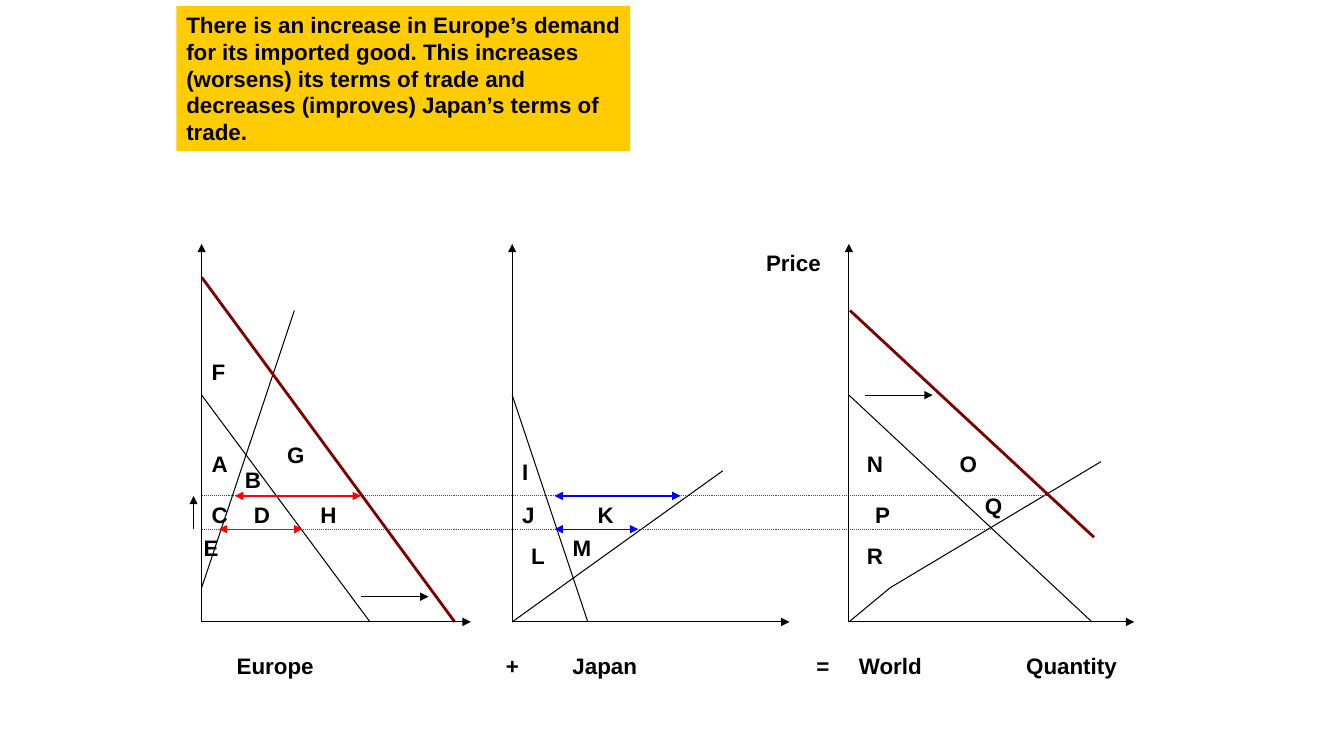
"""Draw the Europe, Japan and world trade diagrams after a rise in Europe's demand."""
from dataclasses import dataclass

from lxml import etree
from pptx import Presentation
from pptx import util as u
from pptx.dml.color import RGBColor
from pptx.enum import dml, shapes, text
from pptx.oxml import ns


@dataclass(frozen=True)
class Theme:
    ink: str = "000000"
    red: str = "FF0000"
    blue: str = "0000FF"
    maroon: str = "800000"
    gold: str = "FFCC00"
    font: str = "Arial"
    size: float = 16
    thin: float = 0.75
    trade: float = 1
    bold: float = 2


THEME = Theme()
EUROPE, JAPAN, WORLD = 2, 5.08, 8.42
BASE, TOP = 6.17, 2.42
OLD_PRICE, NEW_PRICE = 5.25, 4.92
CAPTION_TOP = 6.42

AXIS_ENDS = {EUROPE: 4.67, JAPAN: 7.83, WORLD: 11.25}
CURVES = [
    ((EUROPE, 3.92), (3.67, BASE)),
    ((JAPAN, 3.92), (5.83, BASE)),
    ((WORLD, 3.92), (10.83, BASE)),
    ((EUROPE, 5.83), (2.92, 3.08)),
    ((JAPAN, BASE), (7.17, 4.67)),
    ((WORLD, BASE), (8.83, 5.83)),
    ((8.83, 5.83), (10.92, 4.58)),
]
NEW_DEMAND = [((8.43, 3.08), (10.85, 5.33)), ((EUROPE, 2.75), (4.51, BASE))]
PRICE_LINES = [(OLD_PRICE, 9.83), (NEW_PRICE, 10.42)]
TRADE_VOLUMES = [
    (2.17, 3, OLD_PRICE, THEME.red),
    (5.5, 6.33, OLD_PRICE, THEME.blue),
    (2.33, 3.58, NEW_PRICE, THEME.red),
    (5.5, 6.75, NEW_PRICE, THEME.blue),
]
SHIFTS = [
    ((3.58, 5.92), (4.25, 5.92)),
    ((8.58, 3.92), (9.25, 3.92)),
    ((1.92, OLD_PRICE), (1.92, NEW_PRICE)),
]
CAPTIONS = [
    ("Europe", 2.25, CAPTION_TOP, 1),
    ("Japan", 5.58, CAPTION_TOP, 1),
    ("World", 8.42, CAPTION_TOP, 1),
    ("+", 4.92, CAPTION_TOP, 0.33),
    ("=", 8, CAPTION_TOP, 0.33),
    ("Price", 7.5, TOP, 0.83),
    ("Quantity", 10.08, CAPTION_TOP, 1.33),
]
AREAS = [
    ("A", 2, 4.42), ("B", 2.33, 4.58), ("C", 2, 4.92), ("D", 2.42, 4.92),
    ("E", 1.92, 5.25), ("F", 2, 3.5), ("G", 2.75, 4.33), ("H", 3.08, 4.92),
    ("I", 5.08, 4.5), ("J", 5.08, 4.92), ("K", 5.83, 4.92), ("L", 5.17, 5.33),
    ("M", 5.58, 5.25), ("N", 8.5, 4.42), ("O", 9.42, 4.42), ("P", 8.58, 4.92),
    ("Q", 9.67, 4.83), ("R", 8.5, 5.33),
]
MESSAGE = (
    "There is an increase in Europe’s demand for its imported good. "
    "This increases (worsens) its terms of trade and decreases (improves) "
    "Japan’s terms of trade."
)


def add_line(slide, start, end, color=THEME.ink, width=THEME.thin, arrows=(), dotted=False):
    """Draw a straight line with arrowheads at the named ends."""
    line = slide.shapes.add_connector(
        shapes.MSO_CONNECTOR.STRAIGHT, *(u.Inches(v) for v in (*start, *end))
    )
    line.line.color.rgb = RGBColor.from_string(color)
    line.line.width = u.Pt(width)
    if dotted:
        line.line.dash_style = dml.MSO_LINE.ROUND_DOT
    properties = line.element.spPr
    stroke = properties.find(ns.qn("a:ln"))
    for arrow in arrows:
        etree.SubElement(stroke, ns.qn(f"a:{arrow}"), type="triangle")
    etree.SubElement(properties, ns.qn("a:effectLst"))


def write(frame, words):
    """Put bold left-aligned words in a text frame."""
    frame.text = words
    frame.word_wrap = True
    frame.auto_size = text.MSO_AUTO_SIZE.SHAPE_TO_FIT_TEXT
    frame.vertical_anchor = text.MSO_ANCHOR.TOP
    paragraph = frame.paragraphs[0]
    paragraph.alignment = text.PP_ALIGN.LEFT
    font = paragraph.runs[0].font
    font.name, font.size, font.bold = THEME.font, u.Pt(THEME.size), True
    font.color.rgb = RGBColor.from_string(THEME.ink)


def add_label(slide, words, left, top, width=0.42):
    """Place a one-line label."""
    label = slide.shapes.add_textbox(*(u.Inches(v) for v in (left, top, width, 0.37)))
    write(label.text_frame, words)


def add_message(slide):
    """Place the explanation on its gold panel."""
    panel = slide.shapes.add_shape(
        shapes.MSO_SHAPE.RECTANGLE, *(u.Inches(v) for v in (1.75, 0.06, 4.5, 1.44))
    )
    panel.shadow.inherit = False
    panel.fill.solid()
    panel.fill.fore_color.rgb = RGBColor.from_string(THEME.gold)
    panel.line.fill.background()
    write(panel.text_frame, MESSAGE)


def add_axes(slide):
    """Draw the price and quantity axes of each panel."""
    for origin, quantity_end in AXIS_ENDS.items():
        for tip in ((origin, TOP), (quantity_end, BASE)):
            add_line(slide, (origin, BASE), tip, arrows=["tailEnd"])


def main():
    """Build and save the slide."""
    deck = Presentation()
    deck.slide_width, deck.slide_height = u.Inches(13.33), u.Inches(7.5)
    slide = deck.slides.add_slide(deck.slide_layouts[6])
    for start, end in CURVES:
        add_line(slide, start, end)
    for price, end in PRICE_LINES:
        add_line(slide, (EUROPE, price), (end, price), THEME.red, dotted=True)
    add_axes(slide)
    for caption in CAPTIONS:
        add_label(slide, *caption)
    for area in AREAS:
        add_label(slide, *area)
    for start, end in NEW_DEMAND:
        add_line(slide, start, end, THEME.maroon, THEME.bold)
    for left, right, price, color in TRADE_VOLUMES:
        add_line(slide, (left, price), (right, price), color, THEME.trade, ["headEnd", "tailEnd"])
    add_message(slide)
    for start, end in SHIFTS:
        add_line(slide, start, end, arrows=["tailEnd"])
    deck.save("out.pptx")


if __name__ == "__main__":
    main()
